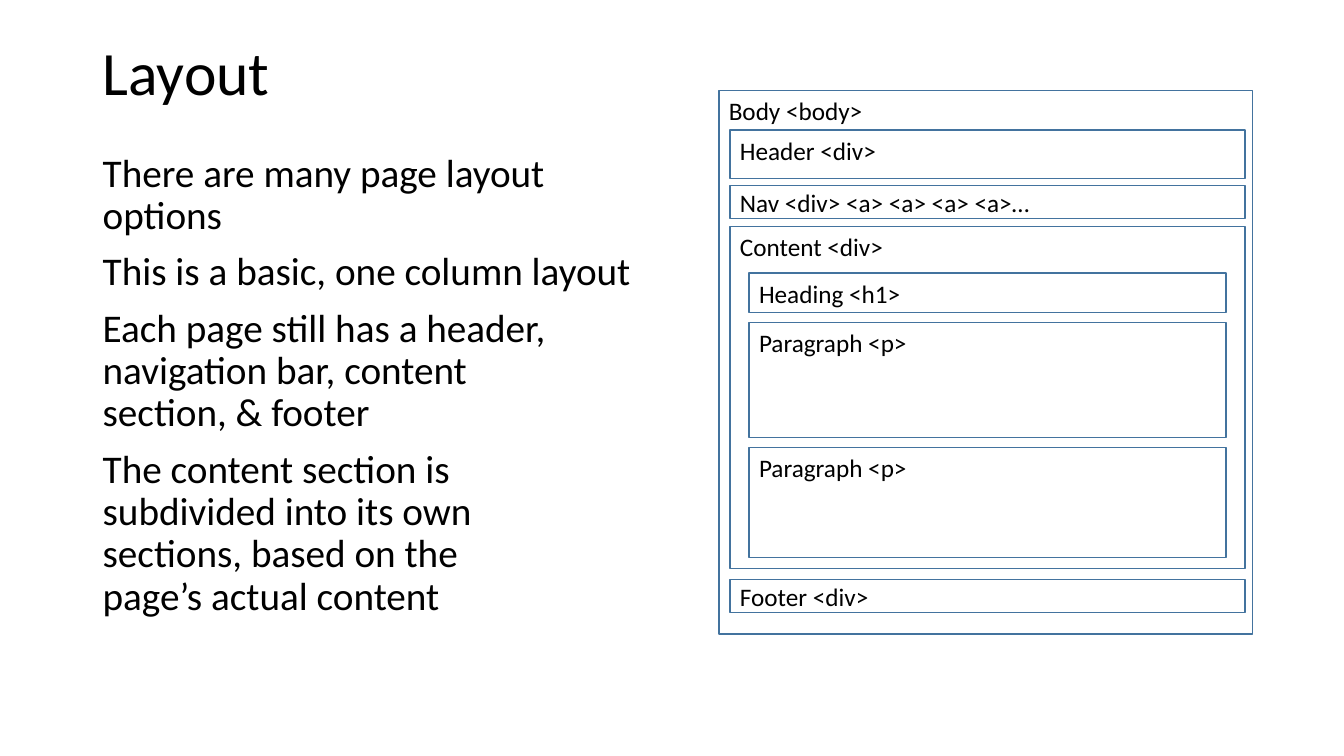
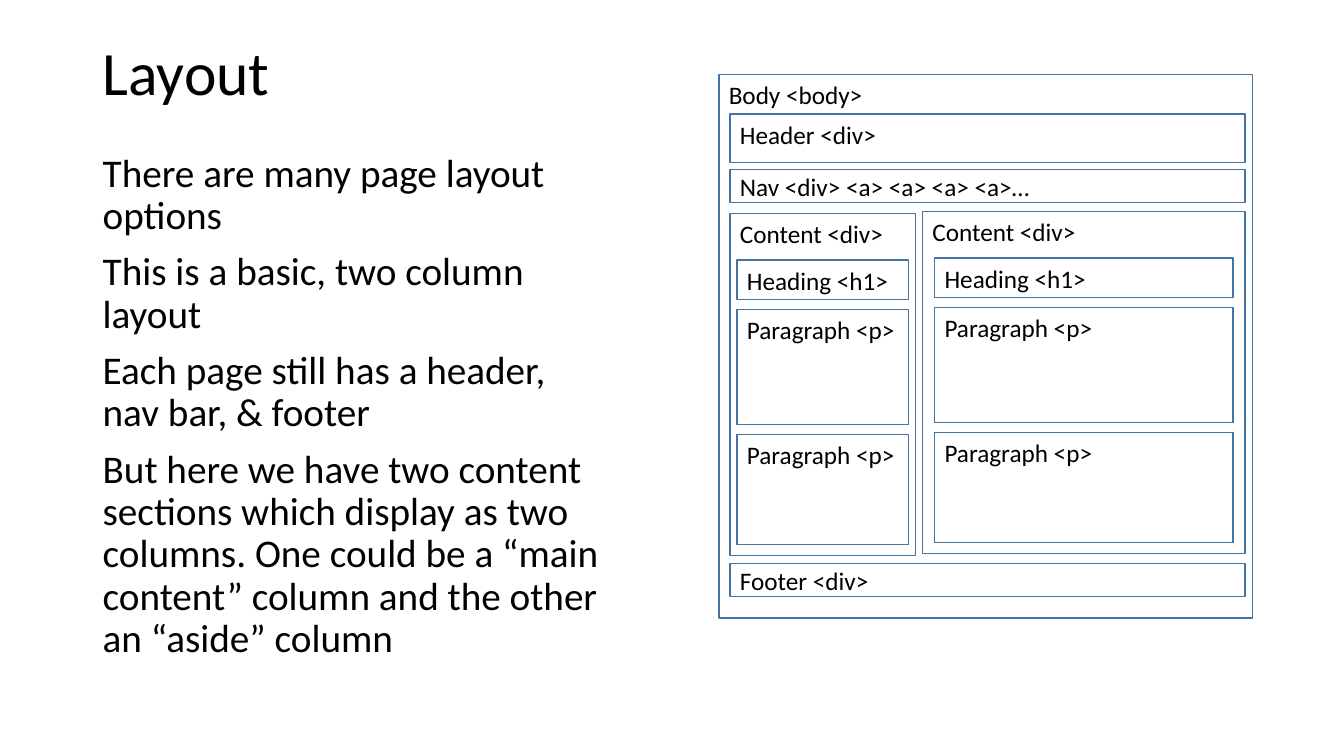
import pptx
import pptx.util
import pptx.dml.color
import pptx.enum.shapes
import pptx.enum.text
from dataclasses import dataclass


@dataclass(frozen=True)
class Theme:
    font: str = "Calibri"
    ink: str = "000000"
    edge: str = "43739E"
    title: int = 44
    body: int = 28
    label: int = 18
    rule: int = 1
    tight: float = 0.9
    gap: int = 10


THEME = Theme()
SCALE = 9144
TOP = pptx.enum.text.MSO_ANCHOR.TOP
MID = pptx.enum.text.MSO_ANCHOR.MIDDLE

PAGES = [
    {
        "title": "Layout",
        "body": [
            ["There are many page layout options"],
            ["This is a basic, one column layout"],
            ["Each page still has a header,", "navigation bar, content",
             "section, & footer"],
            ["The content section is ", "subdivided into its own",
             "sections, based on the", "page’s actual content"],
        ],
        "top": 90,
        "cols": [(724, 135, 511, 19)],
    },
    {
        "title": "Layout",
        "body": [
            ["There are many page layout options"],
            ["This is a basic, two column", "layout"],
            ["Each page still has a header,", "nav bar, & footer"],
            ["But here we have two content", "sections which display as two",
             "columns. One could be a “main", "content” column and the other",
             "an “aside” column"],
        ],
        "top": 74,
        "cols": [(915, 136, 320, 12), (724, 138, 184, 7)],
    },
]

FRAME = [
    ("Body <body>", 713, 0, 529, 539, TOP),
    ("Header <div>", 724, 39, 511, 48, TOP),
    ("Nav <div> <a> <a> <a> <a>…", 724, 94, 511, 33, MID),
    ("Footer <div>", 724, 485, 511, 33, MID),
]
PARTS = [
    ("Heading <h1>", 46, 39),
    ("Paragraph <p>", 95, 114),
    ("Paragraph <p>", 219, 109),
]
COL_TALL = 339


def px(*nums):
    return [pptx.util.Emu(n * SCALE) for n in nums]


def color(code):
    return pptx.dml.color.RGBColor.from_string(code)


def write(frame, paras, size, anchor, tight=1.0, gap=0):
    frame.word_wrap = True
    frame.vertical_anchor = anchor
    for i, lines in enumerate(paras):
        para = frame.add_paragraph() if i else frame.paragraphs[0]
        para.alignment = pptx.enum.text.PP_ALIGN.LEFT
        para.line_spacing = tight
        para.space_before = pptx.util.Pt(gap if i else 0)
        for j, line in enumerate(lines):
            if j:
                para.add_line_break()
            run = para.add_run()
            run.text = line
            run.font.name = THEME.font
            run.font.size = pptx.util.Pt(size)
            run.font.color.rgb = color(THEME.ink)


def add_text(slide, place, paras, size, anchor):
    box = slide.shapes.add_textbox(*px(*place))
    write(box.text_frame, paras, size, anchor, THEME.tight, THEME.gap)


def add_box(group, label, x, y, w, h, anchor=TOP):
    box = group.shapes.add_shape(
        pptx.enum.shapes.MSO_SHAPE.RECTANGLE, *px(x, y, w, h))
    box.shadow.inherit = False
    box.fill.background()
    box.line.color.rgb = color(THEME.edge)
    box.line.width = pptx.util.Pt(THEME.rule)
    write(box.text_frame, [[label]], THEME.label, anchor)


def add_page(deck, page):
    slide = deck.slides.add_slide(deck.slide_layouts[6])
    add_text(slide, (92, 2, 1150, 145), [[page["title"]]], THEME.title, MID)
    add_text(slide, (92, 147, 575, 502), page["body"], THEME.body, TOP)
    group = slide.shapes.add_group_shape()
    top = page["top"]
    for label, x, y, w, h, anchor in FRAME:
        add_box(group, label, x, top + y, w, h, anchor)
    for x, drop, w, inset in page["cols"]:
        y = top + drop
        add_box(group, "Content <div>", x, y, w, COL_TALL)
        for label, down, tall in PARTS:
            add_box(group, label, x + inset, y + down, w - 2 * inset, tall)


def main():
    deck = pptx.Presentation()
    deck.slide_width, deck.slide_height = px(1333, 750)
    for page in PAGES:
        add_page(deck, page)
    deck.save("out.pptx")


if __name__ == "__main__":
    main()
